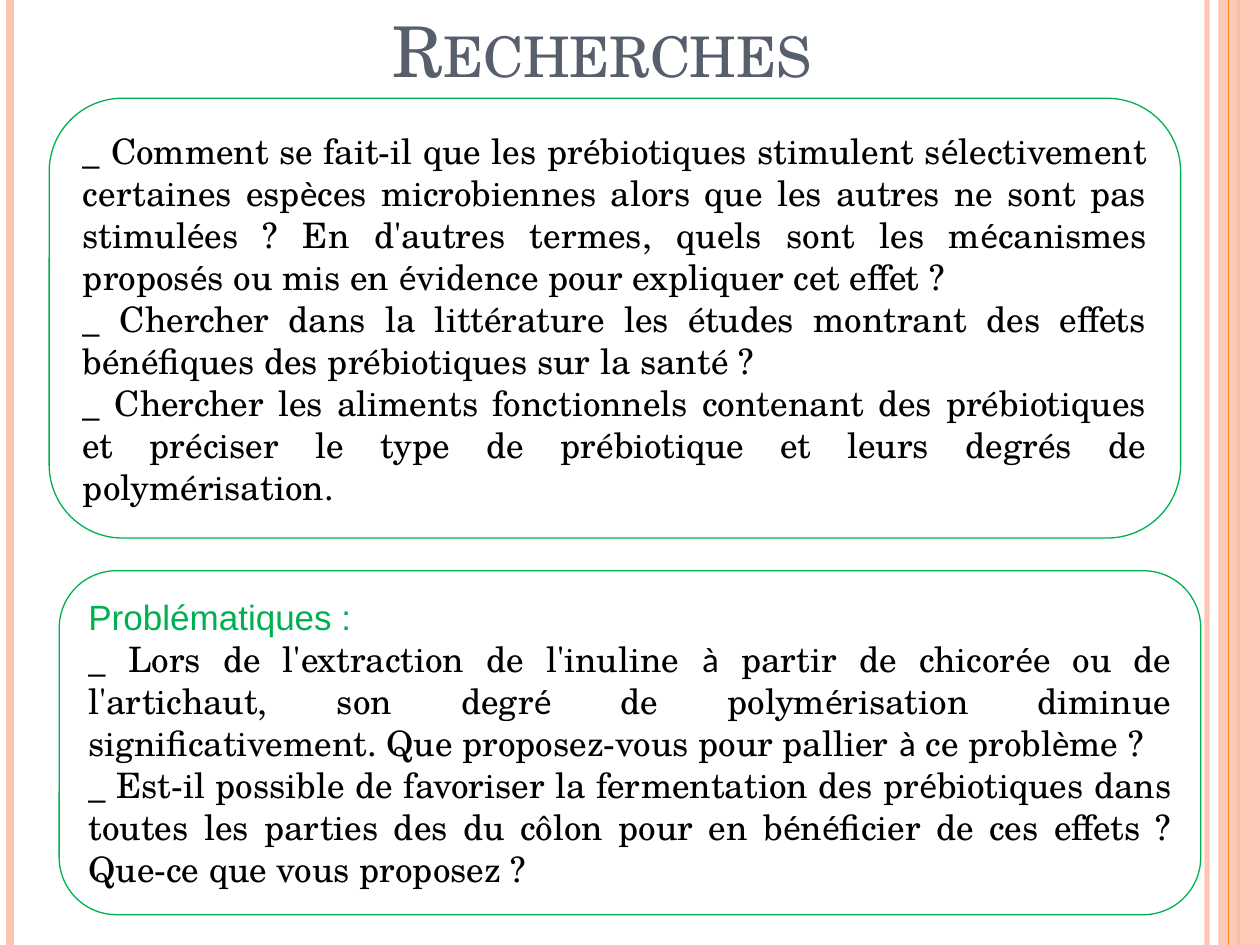
from dataclasses import dataclass
from itertools import groupby

from lxml import etree
from pptx import Presentation
from pptx import util as u
from pptx.dml import color
from pptx.enum import shapes, text
from pptx.oxml import ns


@dataclass(frozen=True)
class Theme:
    heading: str = "575F6D"
    ink: str = "000000"
    paper: str = "FFFFFF"
    green: str = "00B050"
    peach: str = "FEC3AE"
    orange: str = "FE8637"
    serif: str = "TeX Gyre Schola"
    sans: str = "Arial"
    accent_font: str = "Calibri"
    title_size: int = 40
    body_size: int = 20
    outline: float = 0.75


THEME = Theme()
ACCENTS = "éèà"  # letters set in the accent font

RESEARCH = [  # wording, whether its accents take the accent font
    ("_ Comment se fait-il que les prébiotiques stimulent sélectivement certaines espèces "
     "microbiennes alors que les autres ne sont pas stimulées ? En d'autres termes, quels "
     "sont les mécanismes proposés ou mis en évidence pour expliquer cet effet ?", True),
    ("_ Chercher dans la littérature les études montrant des effets bénéfiques des "
     "prébiotiques sur la santé ?", False),
    ("_ Chercher les aliments fonctionnels contenant des prébiotiques et préciser le type "
     "de prébiotique et leurs degrés de polymérisation.", False),
]
PROBLEMS_HEADING = "Problématiques :"
PROBLEMS = [
    ("_ Lors de l'extraction de l'inuline à partir de chicorée ou de l'artichaut, son degré "
     "de polymérisation diminue significativement. Que proposez-vous pour pallier à ce "
     "problème ?", True),
    ("_ Est-il possible de favoriser la fermentation des prébiotiques dans toutes les "
     "parties des du côlon pour en bénéficier de ces effets ? Que-ce que vous proposez ?", True),
]


def rgb(value):
    return color.RGBColor.from_string(value)


def style_run(run, font, size, hue):
    run.font.name = font
    run.font.size = u.Pt(size)
    run.font.color.rgb = rgb(hue)


def set_alpha(fill_parent, percent):
    hue = next(fill_parent.iter(ns.qn("a:srgbClr")))
    etree.SubElement(hue, ns.qn("a:alpha")).set("val", str(percent * 1000))


def add_rail(slide, x, height, hue, width, alpha=None):
    rail = slide.shapes.add_connector(
        shapes.MSO_CONNECTOR.STRAIGHT, u.Inches(x), 0, u.Inches(x), u.Inches(height))
    rail.line.color.rgb = rgb(hue)
    rail.line.width = u.Pt(width)
    properties = rail._element.spPr
    if alpha:
        set_alpha(properties, alpha)
    etree.SubElement(properties, ns.qn("a:effectLst"))


def add_side_rails(slide, width, height):
    add_rail(slide, 9.58, height, THEME.peach, 3, alpha=93)
    add_rail(slide, 0.08, height, THEME.peach, 4.5)
    add_rail(slide, 9.83, height, THEME.orange, 1.5)
    band_left = 9.67
    band = slide.shapes.add_shape(
        shapes.MSO_SHAPE.RECTANGLE, u.Inches(band_left), 0,
        u.Inches(width - band_left), u.Inches(height))
    band.shadow.inherit = False
    band.fill.solid()
    band.fill.fore_color.rgb = rgb(THEME.peach)
    set_alpha(band._element.spPr, 87)
    band.line.fill.background()
    add_rail(slide, 9.75, height, THEME.orange, 0.75)


def place_title(slide, left, top, width, height):
    title = slide.shapes.title
    title.left, title.top = u.Inches(left), u.Inches(top)
    title.width, title.height = u.Inches(width), u.Inches(height)
    frame = title.text_frame
    frame.text = "Recherches"
    frame.auto_size = text.MSO_AUTO_SIZE.NONE
    frame.vertical_anchor = text.MSO_ANCHOR.BOTTOM
    heading = frame.paragraphs[0]
    heading.alignment = text.PP_ALIGN.CENTER
    style_run(heading.runs[0], THEME.serif, THEME.title_size, THEME.heading)
    heading.runs[0].font._element.set("cap", "small")


def write_question(paragraph, wording, mixed):
    for accented, letters in groupby(wording, lambda c: mixed and c in ACCENTS):
        run = paragraph.add_run()
        run.text = "".join(letters)
        style_run(run, THEME.accent_font if accented else THEME.serif,
                  THEME.body_size, THEME.ink)


def add_panel(slide, left, top, width, height, questions, heading=None):
    panel = slide.shapes.add_shape(
        shapes.MSO_SHAPE.ROUNDED_RECTANGLE, u.Inches(left), u.Inches(top),
        u.Inches(width), u.Inches(height))
    panel.shadow.inherit = False
    panel.fill.solid()
    panel.fill.fore_color.rgb = rgb(THEME.paper)
    panel.line.color.rgb = rgb(THEME.green)
    panel.line.width = u.Pt(THEME.outline)
    frame = panel.text_frame
    frame.word_wrap = True
    frame.vertical_anchor = text.MSO_ANCHOR.MIDDLE
    paragraph = frame.paragraphs[0]
    if heading:
        paragraph.text = heading
        style_run(paragraph.runs[0], THEME.sans, THEME.body_size, THEME.green)
    for wording, mixed in questions:
        if paragraph.runs:
            paragraph = frame.add_paragraph()
        write_question(paragraph, wording, mixed)
    for paragraph in frame.paragraphs:
        paragraph.alignment = text.PP_ALIGN.JUSTIFY


def main():
    width, height = 10, 7.5
    deck = Presentation()
    deck.slide_width, deck.slide_height = u.Inches(width), u.Inches(height)
    slide = deck.slides.add_slide(deck.slide_layouts.get_by_name("Title Only"))

    # Decoration along both edges
    add_side_rails(slide, width, height)
    # Title
    place_title(slide, 0.5, -0.47, 8.56, 1.25)
    # Research questions, then open problems
    add_panel(slide, 0.39, 0.78, 8.98, 3.49, RESEARCH)
    add_panel(slide, 0.47, 4.53, 9.06, 2.73, PROBLEMS, PROBLEMS_HEADING)

    deck.save("out.pptx")


if __name__ == "__main__":
    main()
